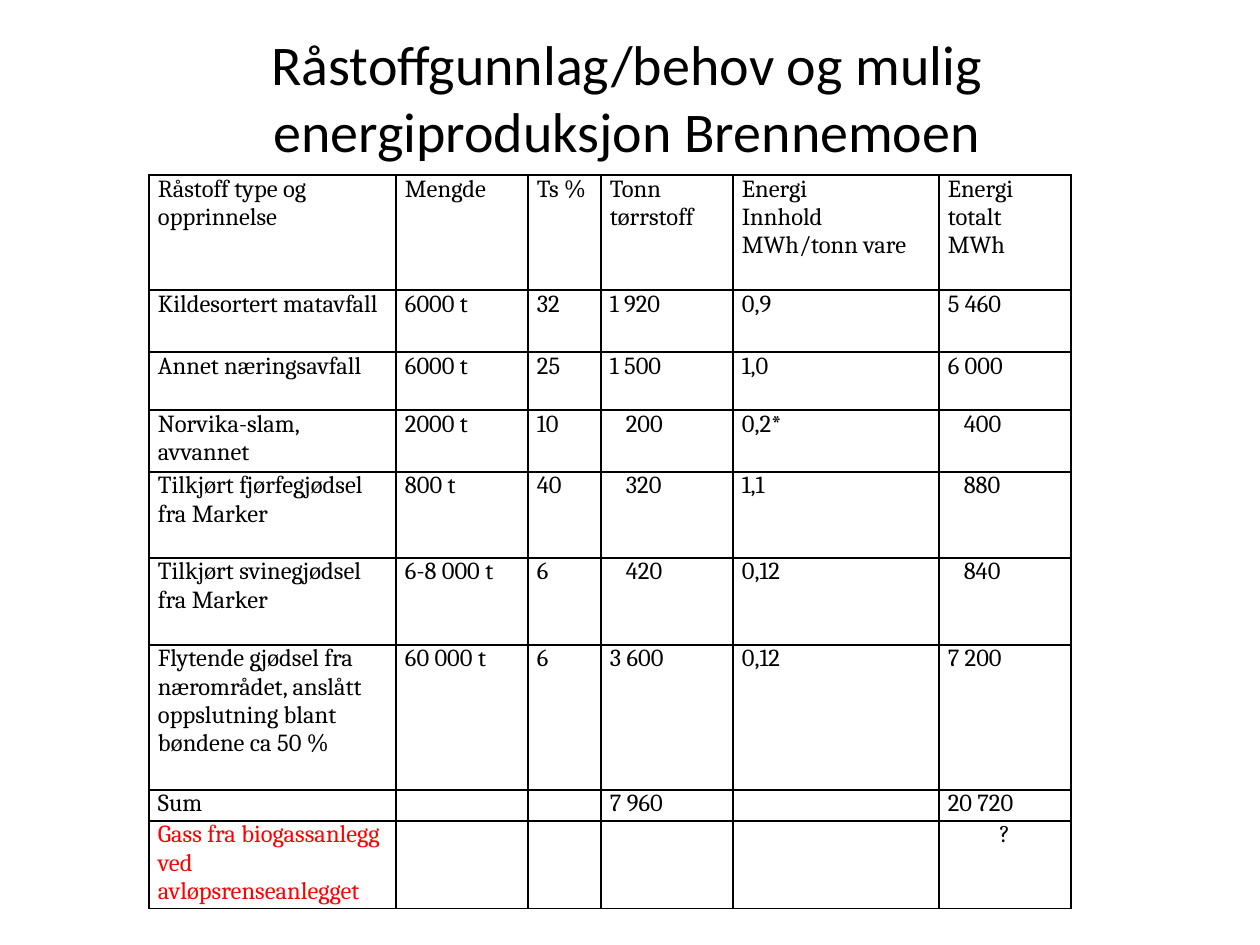
"""Build a slide with a table of raw materials and possible energy production."""
import pptx
import pptx.dml.color
import pptx.enum.text
import pptx.oxml.ns
import pptx.util
from lxml import etree

BLACK = pptx.dml.color.RGBColor(0, 0, 0)
RED = pptx.dml.color.RGBColor(255, 0, 0)
CENTER = pptx.enum.text.PP_ALIGN.CENTER

TITLE = "Råstoffgunnlag/behov og mulig energiproduksjon Brennemoen"
ROWS = [
    ("Råstoff type og opprinnelse", "Mengde", "Ts %", "Tonn\ntørrstoff",
     "Energi\nInnhold\nMWh/tonn vare", "Energi\ntotalt\nMWh"),
    ("Kildesortert matavfall", "6000 t", "32", "1 920", "0,9", "5 460"),
    ("Annet næringsavfall", "6000 t", "25", "1 500", "1,0", "6 000"),
    ("Norvika-slam, avvannet", "2000 t", "10", "200", "0,2*", "400"),
    ("Tilkjørt fjørfegjødsel fra Marker", "800 t", "40", "320", "1,1", "880"),
    ("Tilkjørt svinegjødsel fra Marker", "6-8 000 t", "6", "420", "0,12", "840"),
    ("Flytende gjødsel fra nærområdet, anslått oppslutning blant bøndene ca 50 %",
     "60 000 t", "6", "3 600", "0,12", "7 200"),
    ("Sum", "", "", "7 960", "", "20 720"),
    ("Gass fra biogassanlegg ved avløpsrenseanlegget", "", "", "", "", "?"),
]
COL_WIDTHS = [247, 132, 73, 132, 206, 132]
ROW_HEIGHTS = [115, 62, 58, 62, 86, 87, 145, 31, 88]
SUM_COLS = (3, 5)
DIGIT_INDENT = 16
CELL_MARGIN = 9


def px(n):
    return pptx.util.Emu(round(n * 914400 / 126))


def style_run(r, name, size, color):
    r.font.name = name
    r.font.size = pptx.util.Pt(size)
    r.font.color.rgb = color


def add_borders(cell):
    tcPr = cell._tc.get_or_add_tcPr()
    for side in ("lnL", "lnR", "lnT", "lnB"):
        ln = etree.SubElement(tcPr, pptx.oxml.ns.qn("a:" + side), w="12700")
        fill = etree.SubElement(ln, pptx.oxml.ns.qn("a:solidFill"))
        etree.SubElement(fill, pptx.oxml.ns.qn("a:srgbClr"), val=str(BLACK))


def fill_cell(cell, text, color, indent):
    add_borders(cell)
    cell.fill.background()
    cell.margin_left = cell.margin_right = px(CELL_MARGIN)
    cell.margin_top = cell.margin_bottom = 0
    cell.text_frame.text = text
    for p in cell.text_frame.paragraphs:
        if indent:
            p._p.get_or_add_pPr().set("marL", str(px(DIGIT_INDENT)))
        if text == "?":
            p.alignment = CENTER
        for r in p.runs:
            style_run(r, "Cambria", 14, color)
        if not text:
            etree.SubElement(p._p, pptx.oxml.ns.qn("a:endParaRPr"), sz="1400")


def main():
    prs = pptx.Presentation()
    prs.slide_width, prs.slide_height = px(1260), px(945)
    s = prs.slides.add_slide(prs.slide_layouts[5])

    title = s.shapes.title
    title.left, title.top, title.width, title.height = map(px, (60, 18, 1134, 157))
    title.text_frame.text = TITLE
    p = title.text_frame.paragraphs[0]
    p.alignment = CENTER
    style_run(p.runs[0], "Calibri", 32, BLACK)

    table = s.shapes.add_table(len(ROWS), len(COL_WIDTHS), px(149), px(175),
                               px(sum(COL_WIDTHS)), px(sum(ROW_HEIGHTS))).table
    table.first_row = table.horz_banding = False
    for col, width in zip(table.columns, COL_WIDTHS):
        col.width = px(width)
    for row, height in zip(table.rows, ROW_HEIGHTS):
        row.height = px(height)
    for i, row in enumerate(ROWS):
        for j, text in enumerate(row):
            color = RED if i == len(ROWS) - 1 and j == 0 else BLACK
            indent = j in SUM_COLS and text.isdigit()
            fill_cell(table.cell(i, j), text, color, indent)

    prs.save("out.pptx")


if __name__ == "__main__":
    main()
